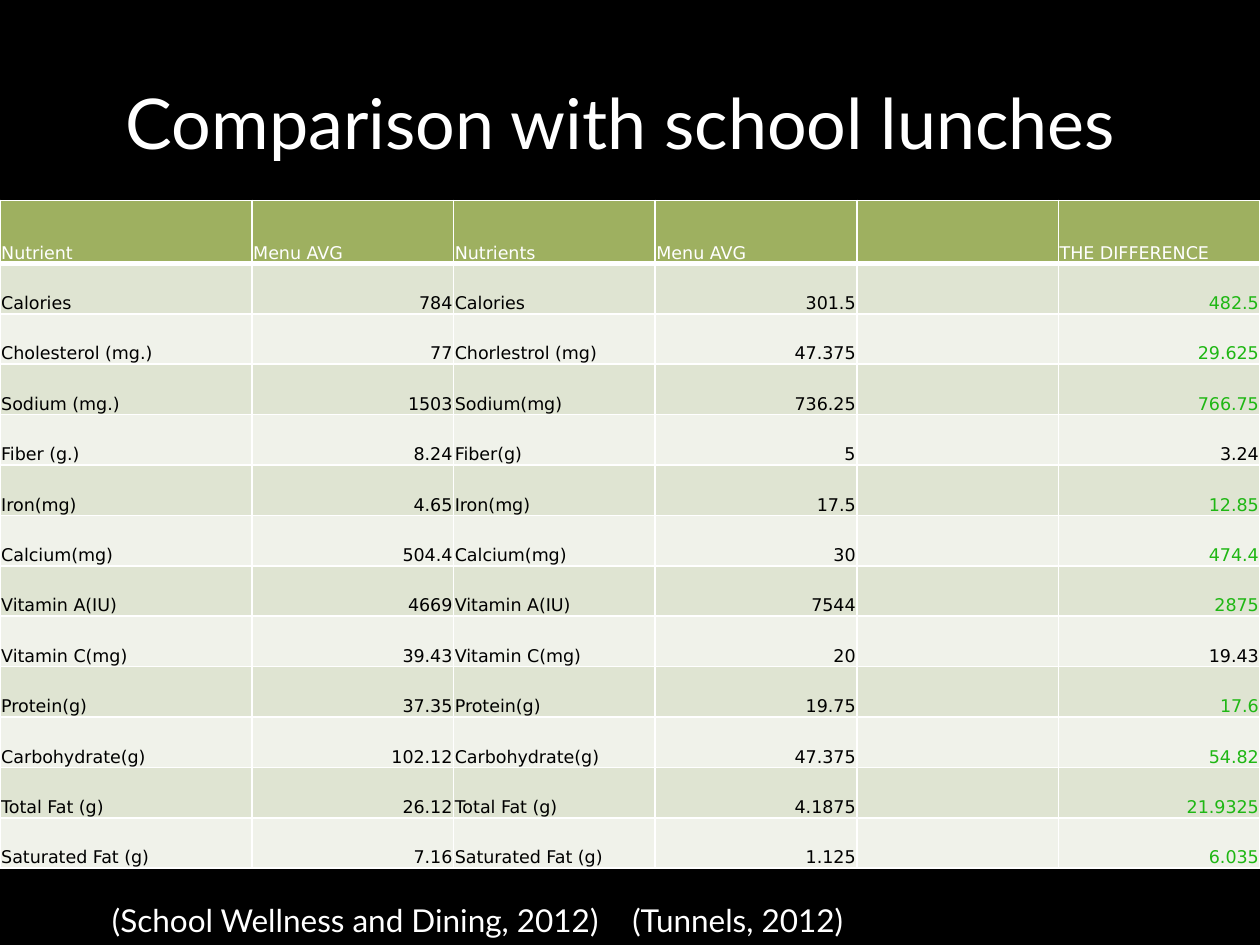
from lxml.etree import SubElement
from pptx import Presentation
from pptx.dml.color import RGBColor
from pptx.enum.text import MSO_ANCHOR, MSO_AUTO_SIZE, PP_ALIGN
from pptx.oxml.ns import qn
from pptx.util import Inches, Pt

HEADERS = ["Nutrient", "Menu AVG", "Nutrients", "Menu AVG", "", "THE DIFFERENCE"]
NUTRIENTS = [
    ("Calories", "784", "Calories", "301.5", "", "482.5"),
    ("Cholesterol (mg.)", "77", "Chorlestrol (mg)", "47.375", "", "29.625"),
    ("Sodium (mg.)", "1503", "Sodium(mg)", "736.25", "", "766.75"),
    ("Fiber (g.)", "8.24", "Fiber(g)", "5", "", "3.24"),
    ("Iron(mg)", "4.65", "Iron(mg)", "17.5", "", "12.85"),
    ("Calcium(mg)", "504.4", "Calcium(mg)", "30", "", "474.4"),
    ("Vitamin A(IU)", "4669", "Vitamin A(IU)", "7544", "", "2875"),
    ("Vitamin C(mg)", "39.43", "Vitamin C(mg)", "20", "", "19.43"),
    ("Protein(g)", "37.35", "Protein(g)", "19.75", "", "17.6"),
    ("Carbohydrate(g)", "102.12", "Carbohydrate(g)", "47.375", "", "54.82"),
    ("Total Fat (g)", "26.12", "Total Fat (g)", "4.1875", "", "21.9325"),
    ("Saturated Fat (g)", "7.16", "Saturated Fat (g)", "1.125", "", "6.035"),
]
PLAIN_DIFFERENCES = ("Fiber (g.)", "Vitamin C(mg)")
NUMBER_COLUMNS = (1, 3, 5)
DIFFERENCE_COLUMN = 5


def color(value):
    return RGBColor.from_string(value)


def write_text(frame, text, *, font, size, fill, align=PP_ALIGN.LEFT):
    paragraph = frame.paragraphs[0]
    paragraph.alignment = align
    if text:
        run = paragraph.add_run()
        run.text = text
        run.font.name = font
        run.font.size = Pt(size)
        run.font.color.rgb = color(fill)
    return paragraph


class SlideBuilder:
    heading_font = "Lato"
    table_font = "DejaVu Sans"
    white = "FFFFFF"
    black = "000000"
    green = "1FB714"
    header_fill = "9EB060"
    band_fills = ("DFE4D2", "F0F2EA")

    def __init__(self, presentation):
        self.slide = presentation.slides.add_slide(presentation.slide_layouts[5])
        background = self.slide.background.fill
        background.solid()
        background.fore_color.rgb = color(self.black)

    def title(self, text, left, top, width, height):
        shape = self.slide.shapes.title
        shape.left, shape.top = Inches(left), Inches(top)
        shape.width, shape.height = Inches(width), Inches(height)
        shape.text_frame.vertical_anchor = MSO_ANCHOR.MIDDLE
        write_text(shape.text_frame, text, font=self.heading_font, size=40,
                   fill=self.white, align=PP_ALIGN.CENTER)

    def sources(self, text, left, top, width, height, tab):
        shape = self.slide.shapes.add_textbox(
            Inches(left), Inches(top), Inches(width), Inches(height))
        frame = shape.text_frame
        frame.word_wrap = True
        frame.auto_size = MSO_AUTO_SIZE.SHAPE_TO_FIT_TEXT
        paragraph = write_text(frame, text, font=self.heading_font, size=18, fill=self.white)
        tabs = SubElement(paragraph._p.get_or_add_pPr(), qn("a:tabLst"))
        SubElement(tabs, qn("a:tab"), pos=str(Inches(tab)), algn="l")

    def borders(self, cell, top, bottom):
        properties = cell._tc.get_or_add_tcPr()
        for side, width in (("L", 1), ("R", 1), ("T", top), ("B", bottom)):
            line = SubElement(properties, qn(f"a:ln{side}"), w=str(Pt(width)))
            fill = SubElement(line, qn("a:solidFill"))
            SubElement(fill, qn("a:srgbClr"), val=self.white)

    def cell(self, cell, text, fill, text_color, align, top=1, bottom=1):
        self.borders(cell, top, bottom)
        cell.fill.solid()
        cell.fill.fore_color.rgb = color(fill)
        cell.vertical_anchor = MSO_ANCHOR.BOTTOM
        cell.margin_left = cell.margin_right = cell.margin_top = Inches(0.01)
        cell.margin_bottom = 0
        write_text(cell.text_frame, text, font=self.table_font, size=10,
                   fill=text_color, align=align)

    def table(self, headers, rows, left, top, column_widths, header_height, row_height):
        height = header_height + row_height * len(rows)
        table = self.slide.shapes.add_table(
            len(rows) + 1, len(headers), Inches(left), Inches(top),
            Inches(sum(column_widths)), Inches(height)).table
        for column, width in zip(table.columns, column_widths):
            column.width = Inches(width)
        for row in table.rows:
            row.height = Inches(row_height)
        table.rows[0].height = Inches(header_height)

        for column, text in enumerate(headers):
            self.cell(table.cell(0, column), text, self.header_fill, self.white,
                      PP_ALIGN.LEFT, bottom=3)
        for index, values in enumerate(rows):
            for column, text in enumerate(values):
                highlighted = (column == DIFFERENCE_COLUMN
                               and values[0] not in PLAIN_DIFFERENCES)
                self.cell(
                    table.cell(index + 1, column), text, self.band_fills[index % 2],
                    self.green if highlighted else self.black,
                    PP_ALIGN.RIGHT if column in NUMBER_COLUMNS else PP_ALIGN.LEFT,
                    top=3 if index == 0 else 1)


def main():
    presentation = Presentation()
    presentation.slide_width = Inches(10)
    presentation.slide_height = Inches(7.5)
    builder = SlideBuilder(presentation)
    builder.table(HEADERS, NUTRIENTS, 0, 1.59, [2] + [1.6] * 5, 0.5, 0.4)
    builder.title("Comparison with school lunches ", 0.79, 0.34, 8.41, 1.25)
    builder.sources("(School Wellness and Dining, 2012)\t(Tunnels, 2012)",
                    0.79, 7.1, 9.21, 0.4, 4.13)
    presentation.save("out.pptx")


if __name__ == "__main__":
    main()
